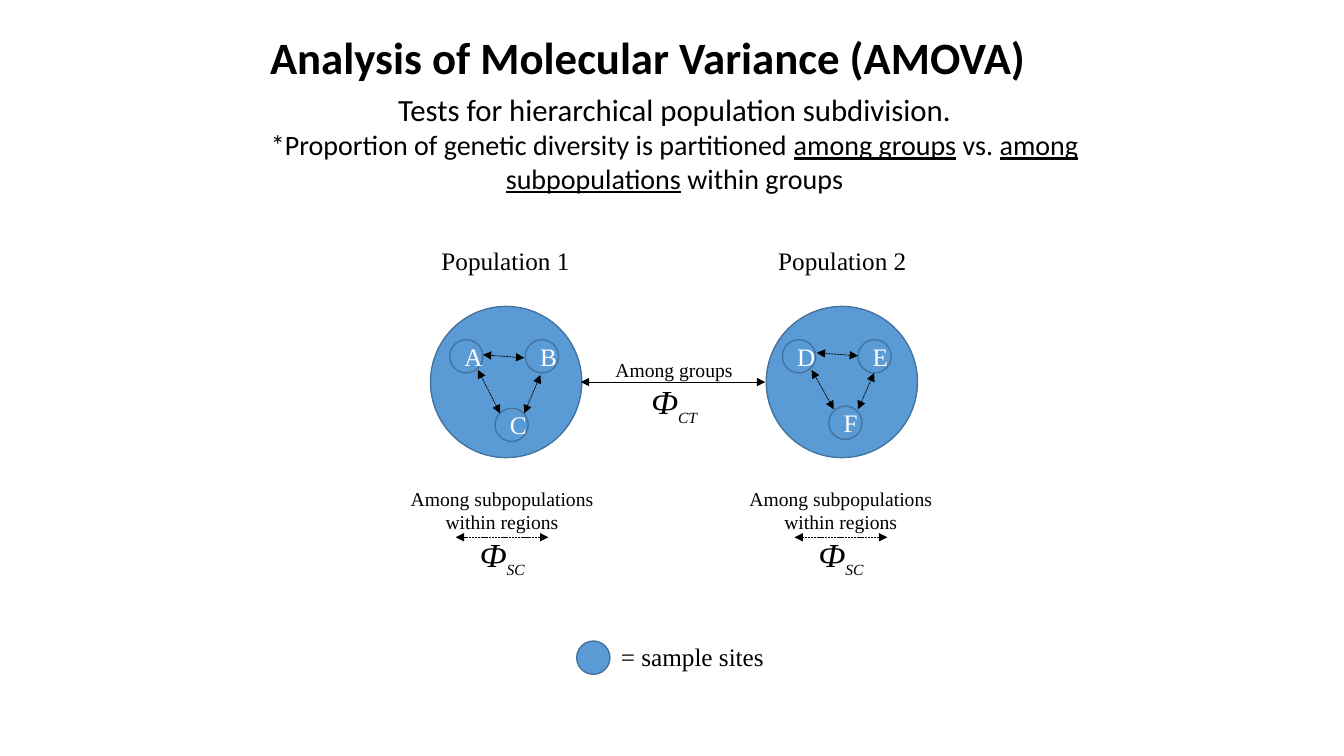
from dataclasses import dataclass

from lxml import etree
from pptx import Presentation
from pptx import util as u
from pptx.dml.color import RGBColor
from pptx.enum import dml, shapes, text
from pptx.oxml.ns import qn


@dataclass(frozen=True)
class Theme:
    sans: str = "Calibri"
    serif: str = "Times New Roman"
    ink: str = "000000"
    light: str = "FFFFFF"
    blue: str = "5B9BD5"
    edge: str = "43739E"
    title: int = 32
    lead: int = 22
    body: int = 20
    label: int = 18
    note: int = 14
    phi: int = 24


T = Theme()
PX = 9144  # 100 px to the inch
SITE = 33


def px(*vals):
    return [u.Emu(v * PX) for v in vals]


def style(font, face, size, color=T.ink, bold=None):
    font.name, font.size, font.bold = face, u.Pt(size), bold
    font.color.rgb = RGBColor.from_string(color)


def add_text(slide, box, wrap=True):
    frame = slide.shapes.add_textbox(*px(*box)).text_frame
    frame.word_wrap = wrap
    frame.auto_size = text.MSO_AUTO_SIZE.SHAPE_TO_FIT_TEXT
    return frame


def add_line(slide, words, box, face, size, bold=None):
    para = add_text(slide, box, wrap=False).paragraphs[0]
    para.text = words
    style(para.font, face, size, bold=bold)


def add_disc(slide, x, y, size, letter=""):
    disc = slide.shapes.add_shape(shapes.MSO_SHAPE.OVAL, *px(x, y, size, size))
    disc.shadow.inherit = False
    disc.fill.solid()
    disc.fill.fore_color.rgb = RGBColor.from_string(T.blue)
    disc.line.color.rgb = RGBColor.from_string(T.edge)
    disc.line.width = u.Pt(1)
    if letter:
        frame = disc.text_frame
        frame.word_wrap = True
        frame.vertical_anchor = text.MSO_ANCHOR.MIDDLE
        para = frame.paragraphs[0]
        para.text, para.alignment = letter, text.PP_ALIGN.CENTER
        style(para.font, T.serif, T.label, T.light)


def add_arrow(slide, x1, y1, x2, y2, dash=True):
    link = slide.shapes.add_connector(
        shapes.MSO_CONNECTOR.STRAIGHT, *px(x1, y1, x2, y2))
    link.line.color.rgb = RGBColor.from_string(T.ink)
    link.line.width = u.Pt(0.5)
    if dash:
        link.line.dash_style = dml.MSO_LINE.SQUARE_DOT
    props = link._element.spPr
    for end in ("a:headEnd", "a:tailEnd"):
        etree.SubElement(props.find(qn("a:ln")), qn(end), type="triangle")
    etree.SubElement(props, qn("a:effectLst"))


def add_stat(slide, words, sub, box, wrap=True):
    """Caption above a phi with a small-caps subscript."""
    frame = add_text(slide, box, wrap)
    note, stat = frame.paragraphs[0], frame.add_paragraph()
    note.text = words
    style(note.font, T.serif, T.note)
    style(stat.font, T.serif, T.phi)
    stat.font.italic = True
    note.alignment = stat.alignment = text.PP_ALIGN.CENTER
    stat.add_run().text = "Ф"
    run = stat.add_run()
    run.text = sub
    props = run._r.get_or_add_rPr()
    props.set("baseline", "-25000")
    props.set("cap", "small")


def add_head(slide, x, y):
    add_line(slide, "Analysis of Molecular Variance (AMOVA)",
             (x + 63, y, 776, 64), T.sans, T.title, bold=True)
    frame = add_text(slide, (x, y + 60, 948, 114))
    lead, body = frame.paragraphs[0], frame.add_paragraph()
    lead.text = "Tests for hierarchical population subdivision."
    for words, under in (
            ("*Proportion of genetic diversity is partitioned ", False),
            ("among groups", True), (" vs. ", False),
            ("among subpopulations", True), (" within groups", False)):
        run = body.add_run()
        run.text, run.font.underline = words, under
    for para, size in ((lead, T.lead), (body, T.body)):
        para.alignment = text.PP_ALIGN.CENTER
        style(para.font, T.sans, size)


def add_group(slide, x, y, name, sites, links, shift):
    """Population disc with its sites; shift nudges name and caption."""
    add_disc(slide, x, y, 150)
    add_line(slide, name, (x + shift[0], y - 66, 149, 40), T.serif, T.label)
    for letter, dx, dy in sites:
        add_disc(slide, x + dx, y + dy, SITE, letter)
    for x1, y1, x2, y2 in links:
        add_arrow(slide, x + x1, y + y1, x + x2, y + y2)
    # Within-region statistic
    left, top = x + shift[1], y + 174
    add_arrow(slide, left + 57, top + 55, left + 149, top + 55)
    add_stat(slide, "Among subpopulations within regions", "sc",
             (left, top, 206, 128))


def add_between(slide, x, y):
    add_arrow(slide, x, y, x + 183, y, dash=False)
    add_stat(slide, "Among groups", "ct", (x + 23, y - 29, 139, 74), wrap=False)


def add_key(slide, x, y):
    add_disc(slide, x, y + 5, SITE)
    add_line(slide, "= sample sites", (x + 34, y, 164, 40), T.serif, T.label)


def main():
    deck = Presentation()
    deck.slide_width, deck.slide_height = px(1333, 750)
    slide = deck.slides.add_slide(deck.slide_layouts[6])

    # Heading
    add_head(slide, 195, 25)

    # Populations
    add_group(slide, 427, 304, "Population 1",
              (("A", 19, 33), ("B", 94, 33), ("C", 64, 101)),
              ((69, 106, 47, 63), (93, 51, 52, 48), (93, 106, 109, 68)),
              (1, -32))
    add_group(slide, 760, 304, "Population 2",
              (("D", 16, 33), ("E", 91, 33), ("F", 62, 99)),
              ((67, 102, 45, 63), (91, 49, 50, 46), (91, 102, 107, 66)),
              (2, -29))

    # Comparison and key
    add_between(slide, 576, 379)
    add_key(slide, 572, 631)

    deck.save("out.pptx")


if __name__ == "__main__":
    main()
